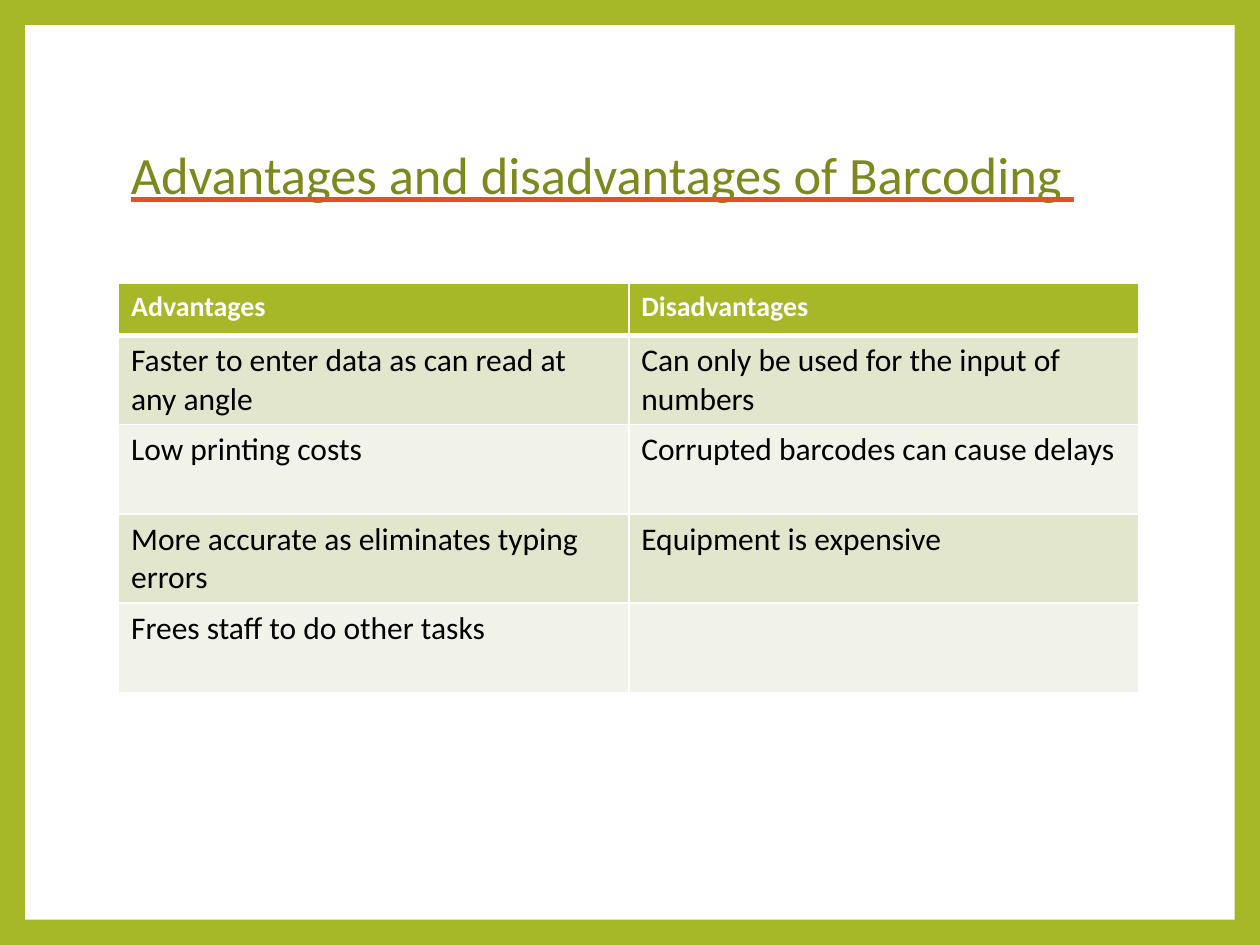
from dataclasses import dataclass

from lxml import etree
from pptx import Presentation
from pptx import util as u
from pptx.dml.color import RGBColor
from pptx.enum import shapes, text
from pptx.oxml import ns

COLOURS = {
    "green": "A6B727",
    "title": "7D891D",
    "underline": "DF5327",
    "white": "FFFFFF",
    "black": "000000",
    "dark band": "E1E6CD",
    "light band": "F1F3E8",
}
FRAME = 0.51
LEFT, WIDTH = 2.39, 20.57


@dataclass(frozen=True)
class Row:
    advantage: str
    disadvantage: str
    height: float = 1.8


ROWS = [
    Row("Advantages", "Disadvantages", 1.04),
    Row("Faster to enter data as can read at any angle", "Can only be used for the input of numbers"),
    Row("Low printing costs", "Corrupted barcodes can cause delays"),
    Row("More accurate as eliminates typing errors", "Equipment is expensive"),
    Row("Frees staff to do other tasks", ""),
]


def rgb(colour: str) -> RGBColor:
    return RGBColor.from_string(COLOURS[colour])


def add_solid(parent, colour: str) -> None:
    fill = etree.SubElement(parent, ns.qn("a:solidFill"))
    etree.SubElement(fill, ns.qn("a:srgbClr"), val=COLOURS[colour])


def write(frame, words: str, *, size: int, colour: str, bold: bool = False,
          underline: str = "", spacing: float = 1.0) -> None:
    paragraph = frame.paragraphs[0]
    paragraph.line_spacing = spacing
    run = paragraph.add_run()
    run.text = words
    run.font.size = u.Pt(size)
    run.font.bold = bold
    run.font.color.rgb = rgb(colour)
    run.font.name = "Calibri"
    if underline:
        run.font.underline = True
        line_fill = etree.Element(ns.qn("a:uFill"))
        add_solid(line_fill, underline)
        run.font._element.find(ns.qn("a:solidFill")).addnext(line_fill)


def add_borders(cell, top: int, bottom: int) -> None:
    properties = cell._tc.get_or_add_tcPr()
    for side, points in {"L": 1, "R": 1, "T": top, "B": bottom}.items():
        border = etree.SubElement(properties, ns.qn(f"a:ln{side}"), w=str(u.Pt(points)))
        add_solid(border, "white")


def add_panel(slide, width: float, height: float) -> None:
    panel = slide.shapes.add_shape(
        shapes.MSO_SHAPE.RECTANGLE, u.Cm(FRAME), u.Cm(FRAME),
        u.Cm(width - 2 * FRAME), u.Cm(height - 2 * FRAME))
    panel.shadow.inherit = False
    panel.fill.solid()
    panel.fill.fore_color.rgb = rgb("white")
    panel.line.fill.background()


def add_title(slide, words: str) -> None:
    frame = slide.shapes.add_textbox(u.Cm(LEFT), u.Cm(1.7), u.Cm(WIDTH), u.Cm(3.76)).text_frame
    frame.word_wrap = True
    frame.vertical_anchor = text.MSO_ANCHOR.MIDDLE
    write(frame, words, size=30, colour="title", underline="underline", spacing=0.9)


def add_comparison(slide, rows: list[Row]) -> None:
    height = sum(row.height for row in rows)
    comparison = slide.shapes.add_table(
        len(rows), 2, u.Cm(LEFT), u.Cm(5.72), u.Cm(WIDTH), u.Cm(height)).table
    for index, row in enumerate(rows):
        comparison.rows[index].height = u.Cm(row.height)
        header = index == 0
        band = "green" if header else "dark band" if index % 2 else "light band"
        for column, words in enumerate((row.advantage, row.disadvantage)):
            cell = comparison.cell(index, column)
            add_borders(cell, top=3 if index == 1 else 1, bottom=3 if header else 1)
            cell.fill.solid()
            cell.fill.fore_color.rgb = rgb(band)
            if words:
                write(cell.text_frame, words, size=16 if header else 18,
                      colour="white" if header else "black", bold=header)


def main() -> None:
    """Build the slide on the advantages and disadvantages of barcoding."""
    width, height = 25.4, 19.05
    deck = Presentation()
    deck.slide_width, deck.slide_height = u.Cm(width), u.Cm(height)
    slide = deck.slides.add_slide(deck.slide_layouts[6])
    slide.background.fill.solid()
    slide.background.fill.fore_color.rgb = rgb("green")
    add_panel(slide, width, height)
    add_title(slide, "Advantages and disadvantages of Barcoding ")
    add_comparison(slide, ROWS)
    deck.save("out.pptx")


if __name__ == "__main__":
    main()
